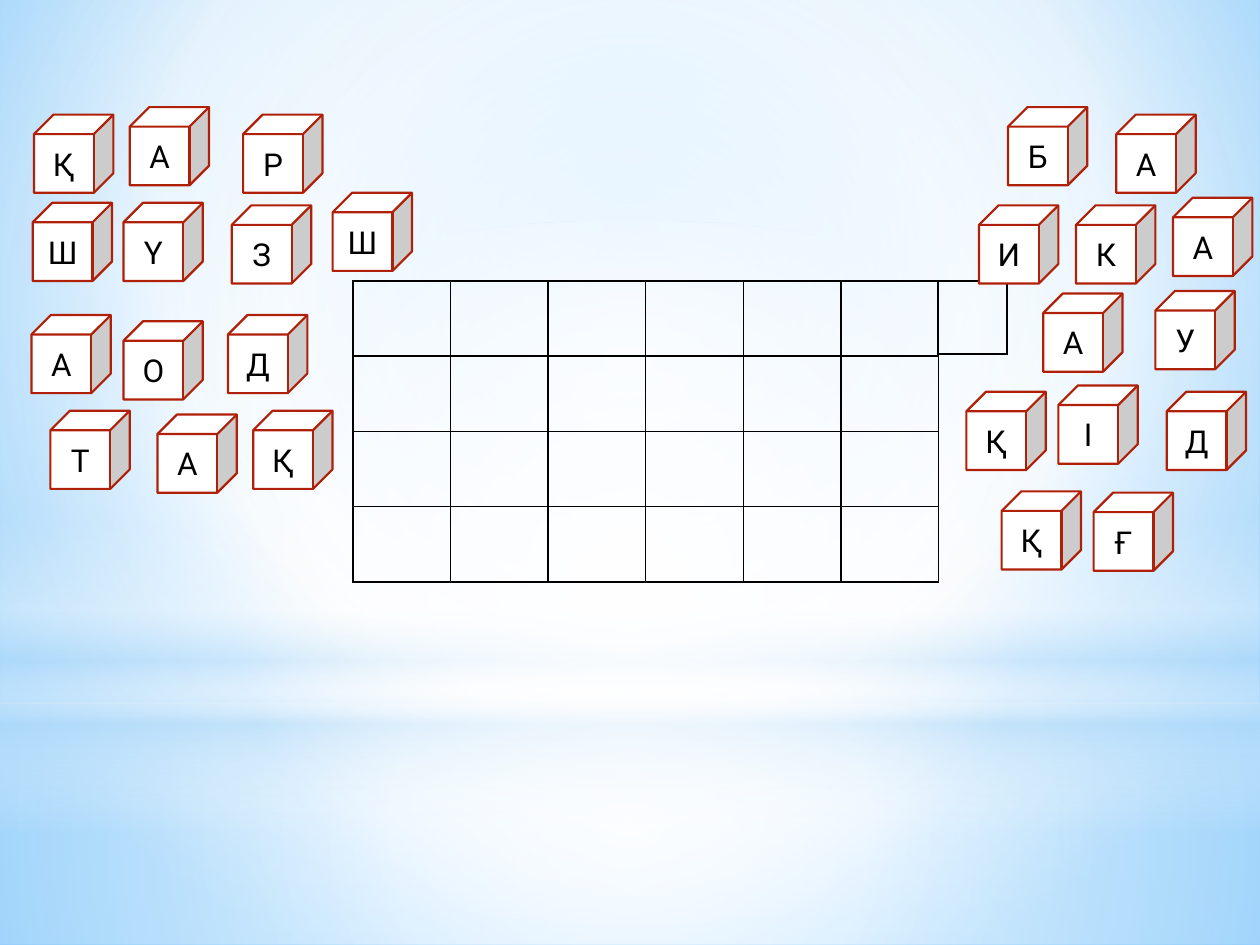
from lxml.etree import SubElement
from pptx import Presentation
from pptx.dml.color import RGBColor
from pptx.enum.shapes import MSO_SHAPE
from pptx.enum.text import MSO_ANCHOR, PP_ALIGN
from pptx.oxml import parse_xml
from pptx.oxml.ns import nsdecls, qn
from pptx.util import Inches, Pt

COLORS = {
    "white": "FFFFFF", "black": "000000", "edge": "B01F07",
    "haze": "B4DCFA", "sky": "9ED5FF", "deep": "5BB9FF",
}
CUBE_SIZE = (0.63, 0.62)
FRAME_FORMAT = {"vertical_anchor": MSO_ANCHOR.MIDDLE, "word_wrap": True}
LETTER_FORMAT = {"name": "Roboto", "size": Pt(18)}
PLAIN_TABLE = {"first_row": False, "horz_banding": False}
CENTER = (50, 50, 50, 50)

# Letter, left, top: those after the word grid overlap it.
CUBES_BEHIND = [
    ("Қ", 0.27, 0.91), ("Ш", 0.26, 1.61), ("А", 1.03, 0.85), ("А", 0.25, 2.5),
    ("Ш", 2.64, 1.53), ("Р", 1.93, 0.91), ("А", 8.28, 2.33), ("А", 9.31, 1.57),
    ("К", 8.54, 1.63), ("У", 9.17, 2.31), ("Қ", 7.95, 3.9), ("А", 8.86, 0.91),
    ("Б", 8, 0.85),
]
CUBES_IN_FRONT = [
    ("Ү", 0.98, 1.61), ("Д", 9.26, 3.11), ("О", 0.98, 2.55), ("Д", 1.81, 2.5),
    ("Ғ", 8.68, 3.91), ("І", 8.4, 3.06), ("Қ", 7.67, 3.11), ("И", 7.77, 1.63),
    ("З", 1.84, 1.63), ("Қ", 2.01, 3.26), ("А", 1.25, 3.29), ("Т", 0.4, 3.26),
]


def apply(target, values):
    for name, value in values.items():
        setattr(target, name, value)


def gradient(stops, focus=None):
    """Build a gradFill from (position, colour, opacity) percentages.

    It is circular around the focus rectangle, or top to bottom without one.
    """
    fill = parse_xml(f'<a:gradFill {nsdecls("a")} rotWithShape="1"/>')
    stop_list = SubElement(fill, qn("a:gsLst"))
    for position, color, opacity in stops:
        stop = SubElement(stop_list, qn("a:gs"), pos=str(position * 1000))
        rgb = SubElement(stop, qn("a:srgbClr"), val=COLORS[color])
        if opacity < 100:
            SubElement(rgb, qn("a:alpha"), val=str(opacity * 1000))
    if focus:
        circle = SubElement(fill, qn("a:path"))
        circle.set("path", "circle")
        edges = {side: str(inset * 1000) for side, inset in zip("ltrb", focus)}
        SubElement(circle, qn("a:fillToRect"), edges)
    else:
        SubElement(fill, qn("a:lin"), ang="5400000", scaled="0")
    return fill


class LetterSlide:
    def __init__(self, presentation):
        self.slide = presentation.slides.add_slide(presentation.slide_layouts[6])
        self.shapes = self.slide.shapes

    def background(self, stops, focus):
        self.slide.background.fill.solid()
        solid = self.slide.element.xpath("p:cSld/p:bg/p:bgPr/a:solidFill")[0]
        solid.getparent().replace(solid, gradient(stops, focus))

    def shape(self, kind, left, top, width, height):
        shape = self.shapes.add_shape(
            kind, Inches(left), Inches(top), Inches(width), Inches(height))
        shape.shadow.inherit = False
        return shape

    def glow(self, kind, top, height, stops, focus=None):
        glow = self.shape(kind, 0, top, 10, height)
        glow.line.fill.background()
        glow.fill.solid()
        solid = glow.element.spPr.find(qn("a:solidFill"))
        solid.getparent().replace(solid, gradient(stops, focus))

    def cube(self, letter, left, top):
        cube = self.shape(MSO_SHAPE.CUBE, left, top, *CUBE_SIZE)
        cube.fill.solid()
        cube.fill.fore_color.rgb = RGBColor.from_string(COLORS["white"])
        cube.line.color.rgb = RGBColor.from_string(COLORS["edge"])
        cube.line.width = Pt(1.25)
        apply(cube.text_frame, FRAME_FORMAT)
        paragraph = cube.text_frame.paragraphs[0]
        paragraph.alignment = PP_ALIGN.CENTER
        run = paragraph.add_run()
        run.text = letter
        apply(run.font, LETTER_FORMAT)
        run.font.color.rgb = RGBColor.from_string(COLORS["black"])

    def grid(self, rows, columns, left, top, width, height):
        grid = self.shapes.add_table(
            rows, columns, Inches(left), Inches(top),
            Inches(width), Inches(height)).table
        apply(grid, PLAIN_TABLE)
        for cell in grid.iter_cells():
            self.cell_borders(cell)
            cell.fill.background()

    def cell_borders(self, cell):
        properties = cell._tc.get_or_add_tcPr()
        for side in ("lnL", "lnR", "lnT", "lnB"):
            border = SubElement(properties, qn(f"a:{side}"), w=str(Pt(1)))
            fill = SubElement(border, qn("a:solidFill"))
            SubElement(fill, qn("a:srgbClr"), val=COLORS["black"])


def main():
    presentation = Presentation()
    presentation.slide_width, presentation.slide_height = Inches(10), Inches(7.5)
    page = LetterSlide(presentation)

    page.background(
        [(0, "sky", 100), (60, "white", 100), (100, "deep", 100)], (20, 10, 20, 60))
    page.glow(MSO_SHAPE.RECTANGLE, 5.58, 1.92,
              [(0, "white", 91), (37, "white", 76), (100, "haze", 79)], CENTER)
    page.glow(MSO_SHAPE.RECTANGLE, 0, 5.58,
              [(0, "white", 89), (48, "white", 62), (100, "haze", 79)], CENTER)
    page.glow(MSO_SHAPE.RECTANGLE, 4.12, 2.5,
              [(0, "white", 0), (29, "white", 30), (45, "haze", 40),
               (55, "white", 26), (65, "haze", 60), (100, "white", 0)])
    page.glow(MSO_SHAPE.OVAL, 1.75, 5.58,
              [(0, "white", 100), (56, "white", 0)], CENTER)

    for cube in CUBES_BEHIND:
        page.cube(*cube)
    page.grid(4, 6, 2.8, 2.23, 4.65, 2.39)
    page.grid(1, 1, 7.44, 2.23, 0.55, 0.58)
    for cube in CUBES_IN_FRONT:
        page.cube(*cube)

    presentation.save("out.pptx")


if __name__ == "__main__":
    main()
